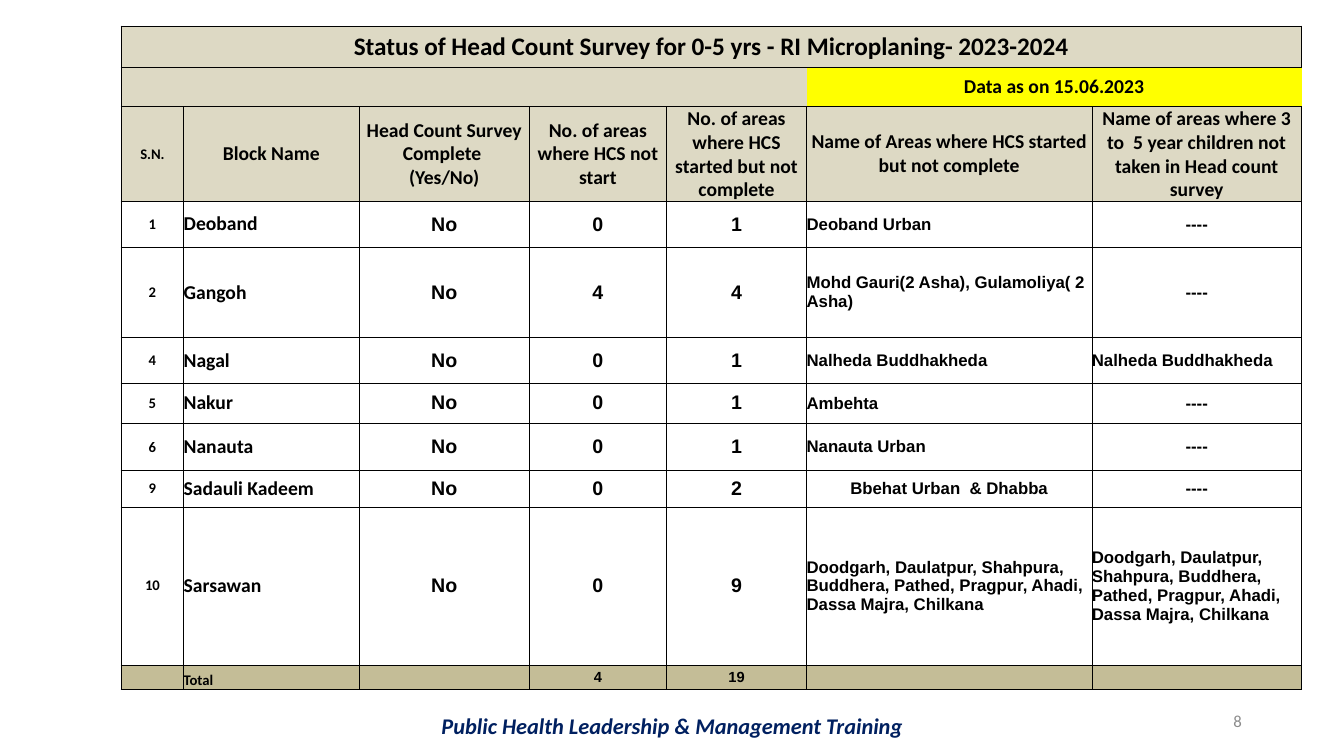
from lxml.etree import SubElement
from pptx import Presentation
from pptx.dml.color import RGBColor
from pptx.enum.text import MSO_ANCHOR, MSO_AUTO_SIZE, PP_ALIGN
from pptx.oxml.ns import qn
from pptx.util import Pt

COLORS = {"black": "000000", "navy": "002060", "grey": "8C8C8C",
          "header": "DDD9C4", "total": "C4BD97", "yellow": "FFFF00"}
LEFT, CENTER, RIGHT = PP_ALIGN.LEFT, PP_ALIGN.CENTER, PP_ALIGN.RIGHT

COLUMN_WIDTHS = [44.6, 125.3, 121.7, 97.9, 100.1, 203.8, 149.8]
ROW_HEIGHTS = [29.5, 28.1, 67.7, 32.4, 64.8, 32.4, 28.8, 33.8, 25.9, 113, 17.3]
HEADINGS = ["S.N.", "Block Name", "Head Count Survey Complete \n(Yes/No)",
            "No. of areas where HCS not start",
            "No. of areas where HCS started but not complete",
            "Name of Areas where HCS started but not complete",
            "Name of areas where 3 to  5 year children not taken in Head count survey"]
NONE = "----"
SARSAWAN_AREAS = ("Doodgarh, Daulatpur, Shahpura, Buddhera, Pathed, Pragpur, Ahadi, "
                  "Dassa Majra, Chilkana")
BLOCKS = [
    ["1", "Deoband", "No", "0", "1", "Deoband Urban", NONE],
    ["2", "Gangoh", "No", "4", "4", "Mohd Gauri(2 Asha), Gulamoliya( 2 Asha)", NONE],
    ["4", "Nagal", "No", "0", "1", "Nalheda Buddhakheda", "Nalheda Buddhakheda"],
    ["5", "Nakur", "No", "0", "1", "Ambehta", NONE],
    ["6", "Nanauta", "No", "0", "1", "Nanauta Urban", NONE],
    ["9", "Sadauli Kadeem", "No", "0", "2", "Bbehat Urban  & Dhabba", NONE],
    ["10", "Sarsawan", "No", "0", "9", SARSAWAN_AREAS, SARSAWAN_AREAS],
]
TOTALS = ["", "Total", "", "4", "19", "", ""]
# Font, size and alignment of each column in the block rows
BLOCK_STYLES = [("Calibri", 10.5, CENTER), ("Calibri", 14, LEFT),
                *[("Arial", 14, CENTER)] * 3, *[("Arial", 12, LEFT)] * 2]


class SurveySlide:
    def __init__(self, slide):
        self.slide = slide

    def add_words(self, frame, text, font, size, align, color="black", bold=True, italic=False):
        paragraph = frame.paragraphs[0]
        paragraph.alignment = align
        if not text:
            SubElement(paragraph._p, qn("a:endParaRPr"), sz=str(int(size * 100)))
        for number, line in enumerate(text.split("\n") if text else []):
            if number:
                paragraph.add_line_break()
            run = paragraph.add_run()
            run.text = line
            run.font.name, run.font.size = font, Pt(size)
            run.font.bold, run.font.italic = bold, italic
            run.font.color.rgb = RGBColor.from_string(COLORS[color])

    def text(self, left, top, width, height, text, size, align, color, **style):
        box = self.slide.shapes.add_textbox(Pt(left), Pt(top), Pt(width), Pt(height))
        box.text_frame.word_wrap = True
        self.add_words(box.text_frame, text, "Calibri", size, align, color, **style)
        return box.text_frame

    def table(self, left, top, widths, heights):
        table = self.slide.shapes.add_table(
            len(heights), len(widths), Pt(left), Pt(top),
            Pt(sum(widths)), Pt(sum(heights))).table
        table.first_row = table.horz_banding = False
        for column, width in zip(table.columns, widths):
            column.width = Pt(width)
        for row, height in zip(table.rows, heights):
            row.height = Pt(height)
        return table

    def cell(self, cell, text, font, size, align, fill=None, borders=(0.5,) * 4,
             anchor=MSO_ANCHOR.MIDDLE):
        cell.margin_left = cell.margin_right = cell.margin_top = cell.margin_bottom = 0
        cell.vertical_anchor = anchor
        self.add_words(cell.text_frame, text, font, size, align)
        # Borders go left, right, top, bottom; zero means no line
        properties = cell._tc.get_or_add_tcPr()
        for side, width in zip("LRTB", borders):
            line = SubElement(properties, qn(f"a:ln{side}"), w=str(int(Pt(width))))
            if width:
                solid = SubElement(line, qn("a:solidFill"))
                SubElement(solid, qn("a:srgbClr"), val=COLORS["black"])
            else:
                SubElement(line, qn("a:noFill"))
        if fill:
            cell.fill.solid()
            cell.fill.fore_color.rgb = RGBColor.from_string(COLORS[fill])
        else:
            cell.fill.background()


def main():
    deck = Presentation()
    deck.slide_width, deck.slide_height = Pt(960), Pt(540)
    page = SurveySlide(deck.slides.add_slide(deck.slide_layouts[6]))

    # Footer
    footer = page.text(66.2, 505.4, 828, 26.6, "Public Health Leadership & Management Training",
                       16, CENTER, "navy", italic=True)
    footer.auto_size = MSO_AUTO_SIZE.SHAPE_TO_FIT_TEXT

    survey = page.table(86.6, 18.7, COLUMN_WIDTHS, ROW_HEIGHTS)
    last = len(COLUMN_WIDTHS) - 1

    # Title and date rows
    for col in range(last + 1):
        title = "Status of Head Count Survey for 0-5 yrs - RI Microplaning- 2023-2024"
        page.cell(survey.cell(0, col), "" if col else title, "Calibri", 18, CENTER,
                  "header", (1, 1, 1, 1))
        page.cell(survey.cell(1, col), "Data as on 15.06.2023" if col == 5 else "",
                  "Calibri", 14, CENTER, "yellow" if col >= 5 else "header",
                  (0 if col else 1, 0, 1, 0.5))
    survey.cell(0, 0).merge(survey.cell(0, last))
    survey.cell(1, 5).merge(survey.cell(1, last))

    # Headings, blocks and totals
    for col, (font, size, align) in enumerate(BLOCK_STYLES):
        outer = 0.5 if col else 1
        borders = (outer, 0.5, 0.5, 0.5)
        page.cell(survey.cell(2, col), HEADINGS[col], "Calibri", 14 if col else 10.5,
                  CENTER, "header", borders)
        for row, block in enumerate(BLOCKS, 3):
            centered = block[col] == NONE or (col == 5 and block[1] == "Sadauli Kadeem")
            page.cell(survey.cell(row, col), block[col], font, size,
                      CENTER if centered else align, None, borders)
        page.cell(survey.cell(len(ROW_HEIGHTS) - 1, col), TOTALS[col],
                  "Calibri" if col == 1 else "Arial", 10.5, align, "total",
                  (outer, 0.5, 0.5, 1),
                  MSO_ANCHOR.BOTTOM if col == 1 else MSO_ANCHOR.MIDDLE)

    # Page number
    number = page.text(678.2, 500.4, 216, 28.8, "8", 12, RIGHT, "grey", bold=False)
    number.vertical_anchor = MSO_ANCHOR.MIDDLE

    deck.save("out.pptx")


if __name__ == "__main__":
    main()
